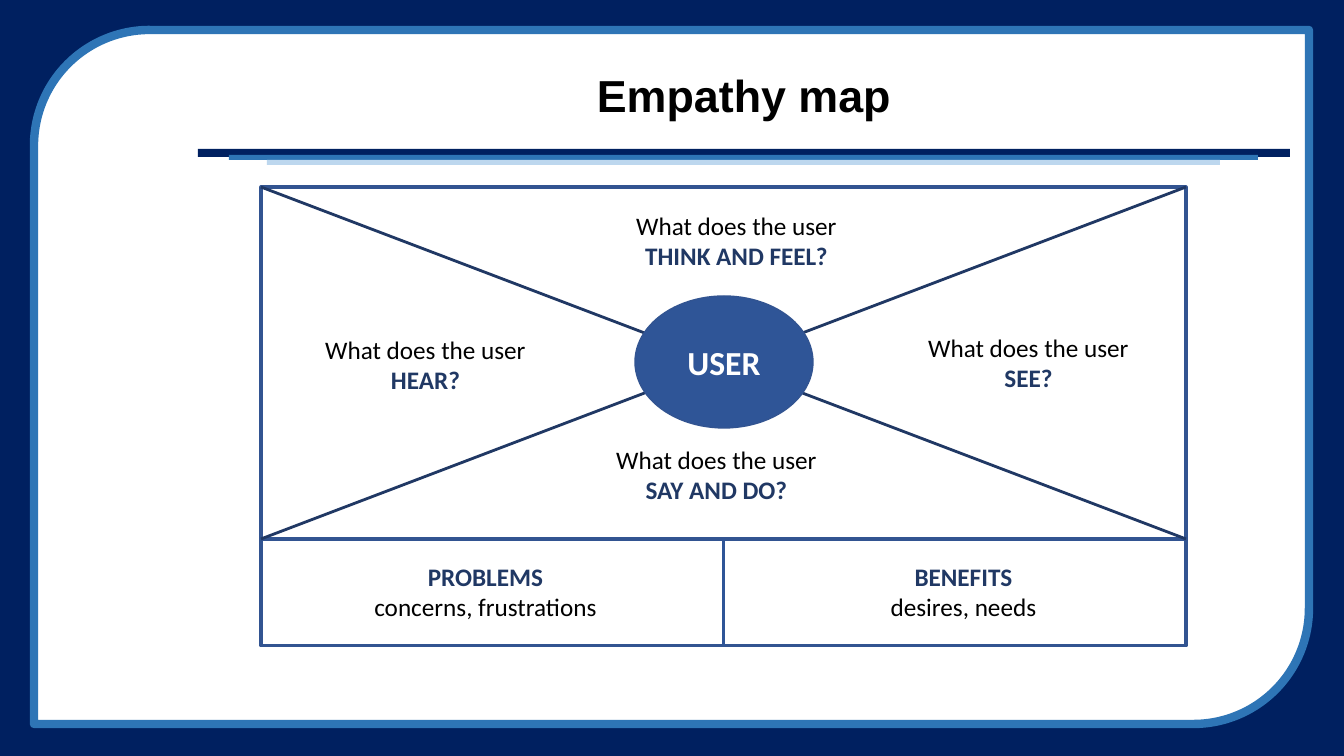
import pptx
import pptx.util
import pptx.dml.color
import pptx.enum.shapes
import pptx.enum.text
import pptx.oxml

PX = 914400 / 100.8
SHAPE = pptx.enum.shapes.MSO_SHAPE
CENTER = pptx.enum.text.PP_ALIGN.CENTER
MIDDLE = pptx.enum.text.MSO_ANCHOR.MIDDLE
AUTO = pptx.enum.text.MSO_AUTO_SIZE

THEME = {
    "navy": "002060", "blue": "2E75B6", "pale": "BDD7EE",
    "white": "FFFFFF", "black": "000000",
    "outline": "325491", "user": "2F5597", "ink": "203864",
    "title_pt": 32, "user_pt": 24, "label_pt": 18,
    "title_font": "Arial", "body_font": "Calibri",
}


def paint(sp, box, fill=None, line=None, weight=0):
    sp.left, sp.top, sp.width, sp.height = (round(v * PX) for v in box)
    sp.shadow.inherit = False
    for target, color in ((sp.fill, fill), (sp.line.fill, line)):
        if color:
            target.solid()
            target.fore_color.rgb = pptx.dml.color.RGBColor.from_string(THEME[color])
        else:
            target.background()
    if line:
        sp.line.width = pptx.util.Pt(weight)


def add_run(p, text, size, color, bold=False, font="body_font"):
    p.alignment = CENTER
    r = p.add_run()
    r.text = text
    r.font.name = THEME[font]
    r.font.size = pptx.util.Pt(THEME[size])
    r.font.bold = bold
    r.font.color.rgb = pptx.dml.color.RGBColor.from_string(THEME[color])


prs = pptx.Presentation()
prs.slide_width = round(1344 * PX)
prs.slide_height = round(756 * PX)
s = prs.slides.add_slide(prs.slide_layouts[5])

parts = [
    (SHAPE.RECTANGLE, (0, 0, 1344, 756), "navy", None, 0),
    (SHAPE.ROUND_2_DIAG_RECTANGLE, (34, 30, 1275, 694), "white", "blue", 6),
    (SHAPE.RECTANGLE, (198, 149, 1092, 8), "navy", None, 0),
    (SHAPE.RECTANGLE, (229, 155, 1029, 5), "blue", None, 0),
    (SHAPE.RECTANGLE, (267, 160, 953, 5), "pale", None, 0),
]
for kind, box, fill, line, weight in parts:
    paint(s.shapes.add_shape(kind, 0, 0, 0, 0), box, fill, line, weight)

title = s.shapes.title
s.shapes._spTree.append(title._element)
title.left, title.top, title.width, title.height = (round(v * PX) for v in (198, 49, 1092, 98))
tf = title.text_frame
tf.auto_size = AUTO.NONE
tf.vertical_anchor = MIDDLE
tf.paragraphs[0].line_spacing = 0.9
add_run(tf.paragraphs[0], "Empathy map", "title_pt", "black", True, "title_font")

LEFT, TOP, WIDTH, MAP_H, FOOT_H = 261, 187, 925, 352, 107
RIGHT, BOTTOM = LEFT + WIDTH, TOP + MAP_H
senses = s.shapes.add_shape(SHAPE.RECTANGLE, 0, 0, 0, 0)
paint(senses, (LEFT, TOP, WIDTH, MAP_H), None, "outline", 2.25)
outcomes = s.shapes.add_shape(SHAPE.RECTANGLE, 0, 0, 0, 0)
paint(outcomes, (LEFT, BOTTOM, WIDTH, FOOT_H), None, "outline", 2.25)

middle = LEFT + WIDTH / 2
lines = [
    (LEFT, BOTTOM, RIGHT, TOP, "ink", 2),
    (LEFT, TOP, RIGHT, BOTTOM, "ink", 2),
    (middle, BOTTOM, middle, BOTTOM + FOOT_H, "user", 2.25),
]
for x1, y1, x2, y2, color, weight in lines:
    line = s.shapes.add_connector(
        pptx.enum.shapes.MSO_CONNECTOR.STRAIGHT, *(round(v * PX) for v in (x1, y1, x2, y2)))
    line.line.color.rgb = pptx.dml.color.RGBColor.from_string(THEME[color])
    line.line.width = pptx.util.Pt(weight)
    line._element.spPr.append(pptx.oxml.parse_xml(
        '<a:effectLst xmlns:a="http://schemas.openxmlformats.org/drawingml/2006/main"/>'))
    if x1 == x2:
        line.begin_connect(outcomes, 0)
        line.end_connect(outcomes, 2)

user = s.shapes.add_shape(SHAPE.OVAL, 0, 0, 0, 0)
paint(user, (635, 296, 178, 132), "user", "outline", 1)
user.text_frame.vertical_anchor = MIDDLE
add_run(user.text_frame.paragraphs[0], "USER", "user_pt", "white", True)

question = "What does the user "
labels = [
    (608, 205, [[(question, False), ("THINK AND FEEL?", True)]]),
    (900, 327, [[(question, False), ("SEE?", True)]]),
    (297, 329, [[(question, False), ("HEAR?", True)]]),
    (588, 439, [[(question, False), ("SAY AND DO?", True)]]),
    (357, 556, [[("PROBLEMS", True)], [("concerns, frustrations", False)]]),
    (835, 556, [[("BENEFITS", True)], [("desires, needs", False)]]),
]
for x, y, paragraphs in labels:
    sp = s.shapes.add_textbox(*(round(v * PX) for v in (x, y, 257, 71)))
    tf = sp.text_frame
    tf.word_wrap = True
    tf.auto_size = AUTO.SHAPE_TO_FIT_TEXT
    for i, runs in enumerate(paragraphs):
        p = tf.add_paragraph() if i else tf.paragraphs[0]
        for text, bold in runs:
            add_run(p, text, "label_pt", "ink" if bold else "black", bold)

prs.save("out.pptx")
